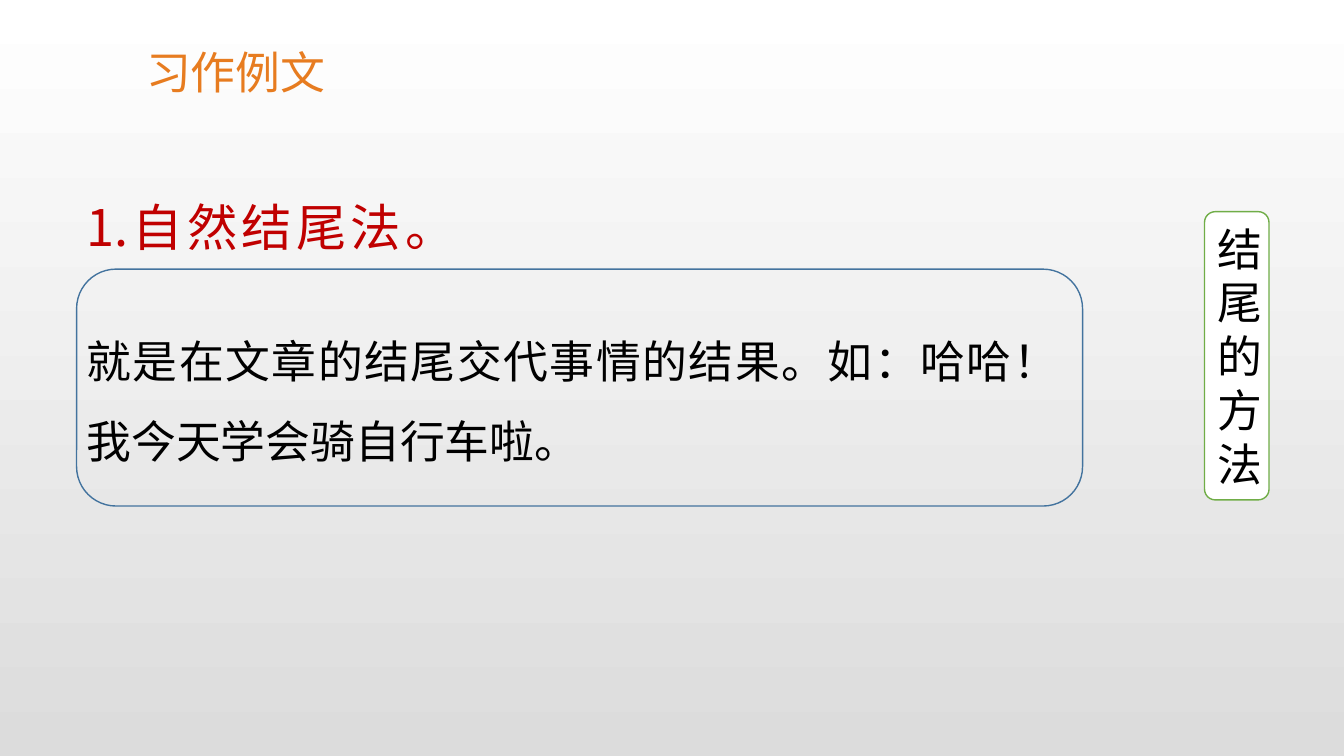
from pptx import Presentation
from pptx.dml.color import RGBColor
from pptx.enum.shapes import MSO_SHAPE
from pptx.enum.text import MSO_ANCHOR, MSO_AUTO_SIZE, PP_ALIGN
from pptx.oxml import parse_xml
from pptx.oxml.ns import nsdecls
from pptx.util import Pt

ROUNDED = MSO_SHAPE.ROUNDED_RECTANGLE
TOP, MIDDLE = MSO_ANCHOR.TOP, MSO_ANCHOR.MIDDLE
GROW, FIXED = MSO_AUTO_SIZE.SHAPE_TO_FIT_TEXT, MSO_AUTO_SIZE.NONE
LEFT, CENTER, JUSTIFY = PP_ALIGN.LEFT, PP_ALIGN.CENTER, PP_ALIGN.JUSTIFY

# Content
TITLE = "习作例文"
METHOD = "1.自然结尾法。"
EXPLANATION = "就是在文章的结尾交代事情的结果。如：哈哈！我今天学会骑自行车啦。"
TOPIC = "结尾的方法"

THEME = {
    "cjk": "Noto Sans CJK SC", "latin": "Arial",
    "title": "E77C20", "method": "C00000", "text": "000000",
    "topic_fill": "FFFFFF", "topic_line": "70AD47", "frame_line": "43739E",
    "backdrop": ("FFFFFF", "DCDCDC"),
    "size": 32, "method_size": 36, "line": 1,
}

# Places in points: left, top, width, height
MARGIN = 54.72
TITLE_AT = (97.2, 28.08, 149.76, 46.08)
METHOD_AT = (MARGIN, 115.2, 241.92, 72.72)
FRAME_AT = (MARGIN, 192.24, 718.56, 169.2)
EXPLANATION_AT = (MARGIN, 215.28, 708.48, 123.84)
TOPIC_AT = (860.4, 151.2, 46.08, 205.92)


def color(name):
    return RGBColor.from_string(THEME[name])


def apply(target, values):
    for name, value in values.items():
        setattr(target, name, value)


def write(box, text, ink, align, size="size", font="cjk", spacing=1.0,
          anchor=TOP, fit=GROW):
    frame = box.text_frame
    apply(frame, {"word_wrap": True, "auto_size": fit, "vertical_anchor": anchor})
    para = frame.paragraphs[0]
    apply(para, {"alignment": align, "line_spacing": spacing})
    span = para.add_run()
    span.text = text
    apply(span.font, {"name": THEME[font], "size": Pt(THEME[size])})
    span.font.color.rgb = color(ink)
    # East Asian typeface
    span.font._element.append(
        parse_xml(f'<a:ea {nsdecls("a")} typeface="{THEME["cjk"]}"/>'))


def rounded_box(parent, place, line, fill=None):
    box = parent.add_shape(ROUNDED, *map(Pt, place))
    box.shadow.inherit = False
    if fill:
        box.fill.solid()
        box.fill.fore_color.rgb = color(fill)
    else:
        box.fill.background()
    box.line.color.rgb = color(line)
    box.line.width = Pt(THEME["line"])
    return box


deck = Presentation()
deck.slide_width, deck.slide_height = Pt(960), Pt(540)
page = deck.slides.add_slide(deck.slide_layouts[5])

# Background
backdrop = page.background.fill
backdrop.gradient()
backdrop.gradient_angle = 270
for stop, position, shade in zip(backdrop.gradient_stops, (0, 1), THEME["backdrop"]):
    stop.position = position
    stop.color.rgb = RGBColor.from_string(shade)

# Topic label on the right
topic = rounded_box(page.shapes, TOPIC_AT, "topic_line", "topic_fill")
write(topic, TOPIC, "text", CENTER, anchor=MIDDLE, fit=FIXED)

# Method heading
method = page.shapes.add_textbox(*map(Pt, METHOD_AT))
write(method, METHOD, "method", JUSTIFY, size="method_size", spacing=1.5)

# Framed explanation
group = page.shapes.add_group_shape()
explanation = group.shapes.add_textbox(*map(Pt, EXPLANATION_AT))
write(explanation, EXPLANATION, "text", JUSTIFY, spacing=1.5)
rounded_box(group.shapes, FRAME_AT, "frame_line")

# Title
title = page.shapes.title
apply(title, dict(zip(("left", "top", "width", "height"), map(Pt, TITLE_AT))))
write(title, TITLE, "title", LEFT, font="latin")

deck.save("out.pptx")
